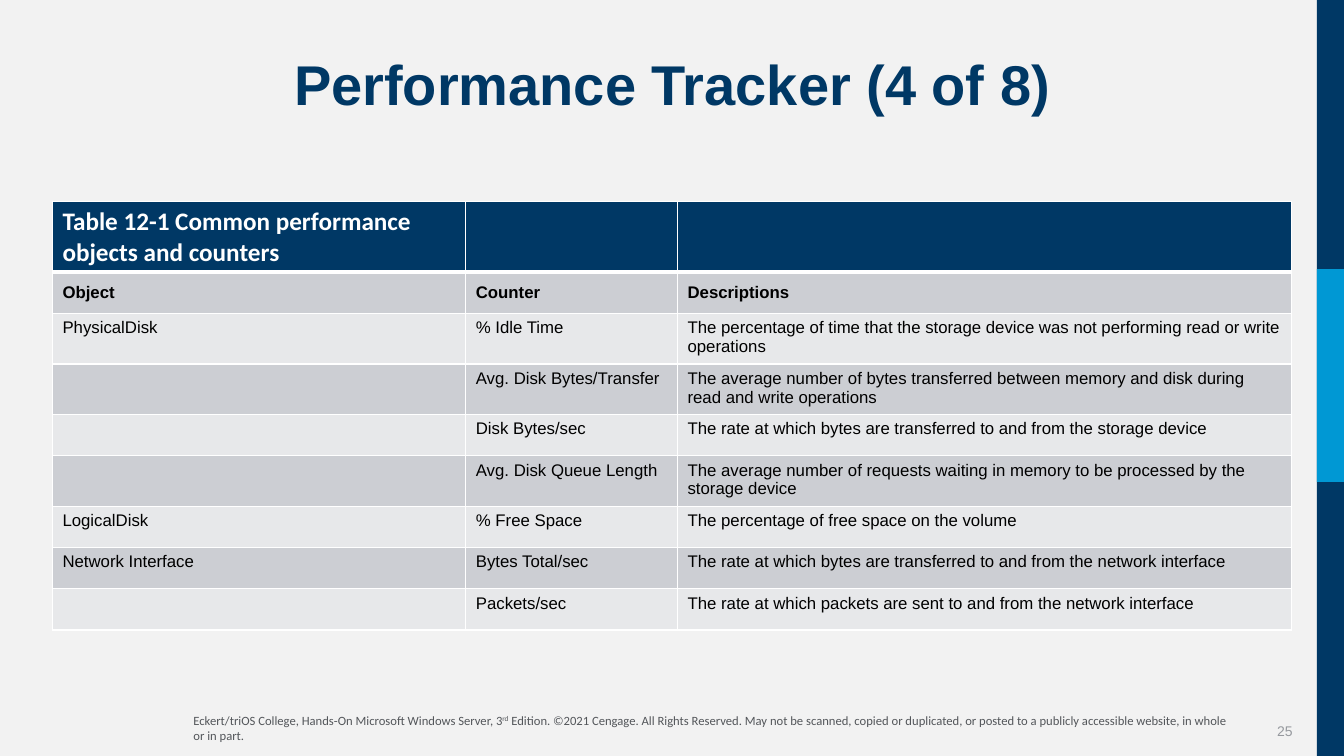
from dataclasses import dataclass

from lxml.etree import SubElement
from pptx import Presentation
from pptx.dml.color import RGBColor
from pptx.enum.shapes import MSO_SHAPE as Shape
from pptx.enum.text import MSO_ANCHOR as Anchor, MSO_AUTO_SIZE as Fit, PP_ALIGN as Align
from pptx.oxml.ns import qn
from pptx.util import Inches, Pt

NAVY = RGBColor(0x00, 0x38, 0x65)
SKY = RGBColor(0x00, 0x98, 0xD4)
PAPER = RGBColor(0xF2, 0xF2, 0xF2)
DARK = RGBColor(0xCC, 0xCE, 0xD3)
LIGHT = RGBColor(0xE7, 0xE8, 0xEA)
GREY = RGBColor(0x96, 0x99, 0x9E)
SLATE = RGBColor(0x53, 0x56, 0x5A)
WHITE = RGBColor(0xFF, 0xFF, 0xFF)
BLACK = RGBColor(0x00, 0x00, 0x00)


@dataclass
class Bar:
    top: float
    height: float
    color: RGBColor


@dataclass
class Style:
    face: str
    size: float
    color: RGBColor
    bold: bool = False


BARS = [Bar(0, 7.5, NAVY), Bar(2.67, 2.11, SKY)]
TITLE = Style("Arial", 40, NAVY, True)
BANNER = Style("Calibri", 18, WHITE, True)
HEAD = Style("Arial", 12, BLACK, True)
BODY = Style("Arial", 12, BLACK)
NOTICE = Style("Calibri", 9, SLATE)
NUMBER = Style("Arial", 10, GREY)

WIDTHS = [4.1, 2.1, 6.09]
ROWS = [
    ("Table 12-1 Common performance objects and counters", "", ""),
    ("Object", "Counter", "Descriptions"),
    ("PhysicalDisk", "% Idle Time",
     "The percentage of time that the storage device was not performing read or write operations"),
    ("", "Avg. Disk Bytes/Transfer",
     "The average number of bytes transferred between memory and disk during read and write operations"),
    ("", "Disk Bytes/sec",
     "The rate at which bytes are transferred to and from the storage device"),
    ("", "Avg. Disk Queue Length",
     "The average number of requests waiting in memory to be processed by the storage device"),
    ("LogicalDisk", "% Free Space", "The percentage of free space on the volume"),
    ("Network Interface", "Bytes Total/sec",
     "The rate at which bytes are transferred to and from the network interface"),
    ("", "Packets/sec",
     "The rate at which packets are sent to and from the network interface"),
]
FOOTER = [
    "Eckert/triOS College, Hands-On Microsoft Windows Server, 3",
    "rd",
    " Edition. ©2021 Cengage. All Rights Reserved. May not be scanned, copied or duplicated, "
    "or posted to a publicly accessible website, in whole or in part.",
]


def format_font(font, style: Style) -> None:
    font.name = style.face
    font.size = Pt(style.size)
    font.bold = style.bold
    font.color.rgb = style.color


def draw_bar(slide, bar: Bar) -> None:
    shape = slide.shapes.add_shape(Shape.RECTANGLE, Inches(13.06), Inches(bar.top),
                                   Inches(0.28), Inches(bar.height))
    shape.shadow.inherit = False
    shape.fill.solid()
    shape.fill.fore_color.rgb = bar.color
    shape.line.fill.background()


def draw_text(slide, left: float, top: float, width: float, parts: list[str], style: Style):
    box = slide.shapes.add_textbox(Inches(left), Inches(top), Inches(width), Inches(0.4))
    frame = box.text_frame
    frame.word_wrap = True
    for part in parts:
        run = frame.paragraphs[0].add_run()
        run.text = part
        format_font(run.font, style)
    return frame


def add_border(cell, bottom: float) -> None:
    props = cell._tc.get_or_add_tcPr()
    for side, width in (("L", 1), ("R", 1), ("T", 1), ("B", bottom)):
        line = SubElement(props, qn(f"a:ln{side}"), w=str(Pt(width)))
        fill = SubElement(line, qn("a:solidFill"))
        SubElement(fill, qn("a:srgbClr"), val=str(WHITE))


def draw_table(slide) -> None:
    table = slide.shapes.add_table(len(ROWS), len(WIDTHS), Inches(0.52), Inches(2),
                                   Inches(sum(WIDTHS)), Inches(0.41 * len(ROWS))).table
    for column, width in zip(table.columns, WIDTHS):
        column.width = Inches(width)
    for i, row in enumerate(ROWS):
        table.rows[i].height = Inches(0.41)
        style = (BANNER, HEAD)[i] if i < 2 else BODY
        color = NAVY if i == 0 else DARK if i % 2 else LIGHT
        for j, text in enumerate(row):
            cell = table.cell(i, j)
            cell.text_frame.text = text
            cell.vertical_anchor = Anchor.MIDDLE if i == 1 else Anchor.TOP
            for run in cell.text_frame.paragraphs[0].runs:
                format_font(run.font, style)
            add_border(cell, 1 if i else 3)
            cell.fill.solid()
            cell.fill.fore_color.rgb = color


def draw_title(slide) -> None:
    title = slide.shapes.title
    title.left, title.top = Inches(0.52), Inches(0.52)
    title.width, title.height = Inches(12.29), Inches(1.33)
    frame = title.text_frame
    frame.text = "Performance Tracker (4 of 8)"
    frame.auto_size = Fit.NONE
    frame.vertical_anchor = Anchor.TOP
    para = frame.paragraphs[0]
    para.alignment = Align.CENTER
    para.line_spacing = 0.9
    format_font(para.runs[0].font, TITLE)


def main() -> None:
    deck = Presentation()
    deck.slide_width, deck.slide_height = Inches(13.33), Inches(7.5)
    slide = deck.slides.add_slide(deck.slide_layouts[5])
    slide.background.fill.solid()
    slide.background.fill.fore_color.rgb = PAPER

    # Page number and copyright line
    number = draw_text(slide, 12.12, 7.05, 0.8, ["25"], NUMBER)
    number.vertical_anchor = Anchor.MIDDLE
    number.paragraphs[0].alignment = Align.RIGHT
    notice = draw_text(slide, 1.82, 7.02, 10.51, FOOTER, NOTICE)
    notice.paragraphs[0].runs[1].font._element.set("baseline", "30000")

    # Side bars
    for bar in BARS:
        draw_bar(slide, bar)

    # Title and table
    draw_title(slide)
    draw_table(slide)
    deck.save("out.pptx")


if __name__ == "__main__":
    main()
